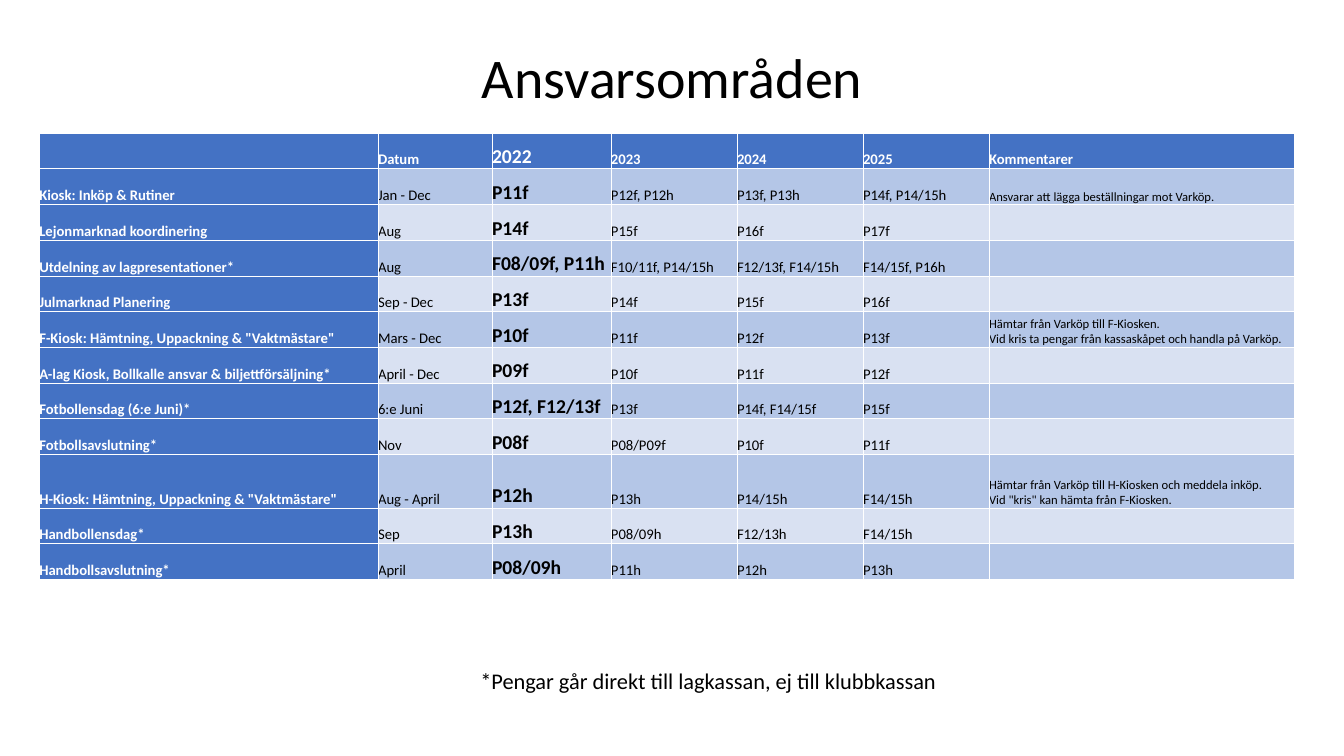
from dataclasses import dataclass

from lxml.etree import fromstring
from pptx import Presentation
from pptx.dml.color import RGBColor
from pptx.enum.text import MSO_ANCHOR, PP_ALIGN
from pptx.oxml.ns import nsdecls
from pptx.util import Inches, Pt


@dataclass(frozen=True)
class Theme:
    """Colours, font and type sizes of the slide."""
    font: str = "Calibri"
    ink: str = "000000"
    paper: str = "FFFFFF"
    header: str = "4472C4"
    bands: tuple = ("B4C6E7", "D9E1F2")
    title: float = 40
    note: float = 16
    current: float = 14
    cell: float = 10.5
    comment: float = 9
    border: float = 0.5


T = Theme()
CURRENT_COL, COMMENT_COL = 2, 6
COL_WIDTHS = [3.36, 1.13, 1.18, 1.25, 1.25, 1.25, 3.03]
TALL_ROW, TALL_HEIGHT = 9, 0.53
ROWS = [
    ["", "Datum", "2022", "2023", "2024", "2025", "Kommentarer"],
    ["Kiosk: Inköp & Rutiner", "Jan - Dec", "P11f", "P12f, P12h", "P13f, P13h",
     "P14f, P14/15h", "Ansvarar att lägga beställningar mot Varköp."],
    ["Lejonmarknad koordinering", "Aug", "P14f", "P15f", "P16f", "P17f", ""],
    ["Utdelning av lagpresentationer*", "Aug", "F08/09f, P11h", "F10/11f, P14/15h",
     "F12/13f, F14/15h", "F14/15f, P16h", ""],
    ["Julmarknad Planering", "Sep - Dec", "P13f", "P14f", "P15f", "P16f", ""],
    ['F-Kiosk: Hämtning, Uppackning & "Vaktmästare"', "Mars - Dec", "P10f", "P11f",
     "P12f", "P13f", "Hämtar från Varköp till F-Kiosken.\n"
     "Vid kris ta pengar från kassaskåpet och handla på Varköp."],
    ["A-lag Kiosk, Bollkalle ansvar & biljettförsäljning*", "April - Dec", "P09f",
     "P10f", "P11f", "P12f", ""],
    ["Fotbollensdag (6:e Juni)*", "6:e Juni", "P12f, F12/13f", "P13f",
     "P14f, F14/15f", "P15f", ""],
    ["Fotbollsavslutning*", "Nov", "P08f", "P08/P09f", "P10f", "P11f", ""],
    ['H-Kiosk: Hämtning, Uppackning & "Vaktmästare"', "Aug - April", "P12h", "P13h",
     "P14/15h", "F14/15h", "Hämtar från Varköp till H-Kiosken och meddela inköp.\n"
     'Vid "kris" kan hämta från F-Kiosken.'],
    ["Handbollensdag*", "Sep", "P13h", "P08/09h", "F12/13h", "F14/15h", ""],
    ["Handbollsavslutning*", "April", "P08/09h", "P11h", "P12h", "P13h", ""],
]


def write(tf, text, size, color=T.ink, bold=False, align=PP_ALIGN.LEFT, spacing=1.0):
    """Fill a text frame with one paragraph, breaking lines at newlines."""
    p = tf.paragraphs[0]
    p.alignment, p.line_spacing = align, spacing
    for i, line in enumerate(text.split("\n")):
        if i:
            p.add_line_break()
        r = p.add_run()
        r.text = line
        r.font.name, r.font.size, r.font.bold = T.font, Pt(size), bold
        r.font.color.rgb = RGBColor.from_string(color)


def place_heading(sp, text, box, size):
    """Set a centred line of text in a shape moved to the given box."""
    sp.left, sp.top, sp.width, sp.height = map(Inches, box)
    tf = sp.text_frame
    tf.word_wrap = True
    tf.vertical_anchor = MSO_ANCHOR.MIDDLE
    write(tf, text, size, align=PP_ALIGN.CENTER, spacing=0.9)


def set_borders(cell):
    """Draw a thin line on all four sides of a cell."""
    tc_pr = cell._tc.get_or_add_tcPr()
    for i, side in enumerate(("lnL", "lnR", "lnT", "lnB")):
        tc_pr.insert(i, fromstring(
            f'<a:{side} {nsdecls("a")} w="{Pt(T.border)}"><a:solidFill>'
            f'<a:srgbClr val="{T.paper}"/></a:solidFill></a:{side}>'))


def format_cell(cell, text, row, col):
    """Style a cell by its place in the table and write its text."""
    is_header = row == 0 or col == 0
    is_current = col == CURRENT_COL
    size = T.cell
    if is_current:
        size = T.current
    elif col == COMMENT_COL and row > 0:
        size = T.comment
    cell.margin_left = cell.margin_right = cell.margin_top = cell.margin_bottom = 0
    cell.vertical_anchor = MSO_ANCHOR.BOTTOM
    cell.fill.solid()
    cell.fill.fore_color.rgb = RGBColor.from_string(
        T.header if is_header else T.bands[(row - 1) % 2])
    set_borders(cell)
    if text:
        write(cell.text_frame, text, size, T.paper if is_header else T.ink,
              bold=is_header or is_current)


def add_duty_table(s, box):
    """Add the table of duties per year in the given box."""
    height = box[3]
    tbl = s.shapes.add_table(len(ROWS), len(COL_WIDTHS), *map(Inches, box)).table
    tbl.horz_banding = False
    for column, width in zip(tbl.columns, COL_WIDTHS):
        column.width = Inches(width)
    row_height = (height - TALL_HEIGHT) / (len(ROWS) - 1)
    for i, values in enumerate(ROWS):
        tbl.rows[i].height = Inches(TALL_HEIGHT if i == TALL_ROW else row_height)
        for j, text in enumerate(values):
            format_cell(tbl.cell(i, j), text, i, j)


def build_duties_slide(prs):
    """Build the slide with title, duty table and footnote."""
    s = prs.slides.add_slide(prs.slide_layouts[5])
    place_heading(s.shapes.title, "Ansvarsområden", (1.1, 0.19, 11.13, 1.22), T.title)
    note_box = (1.46, 6.35, 11.13, 0.84)
    note = s.shapes.add_textbox(*map(Inches, note_box))
    place_heading(note, "*Pengar går direkt till lagkassan, ej till klubbkassan",
                  note_box, T.note)
    add_duty_table(s, (0.39, 1.32, sum(COL_WIDTHS), 4.43))


def main():
    """Create the presentation and save it."""
    prs = Presentation()
    prs.slide_width, prs.slide_height = Inches(13.33), Inches(7.5)
    build_duties_slide(prs)
    prs.save("out.pptx")


if __name__ == "__main__":
    main()
